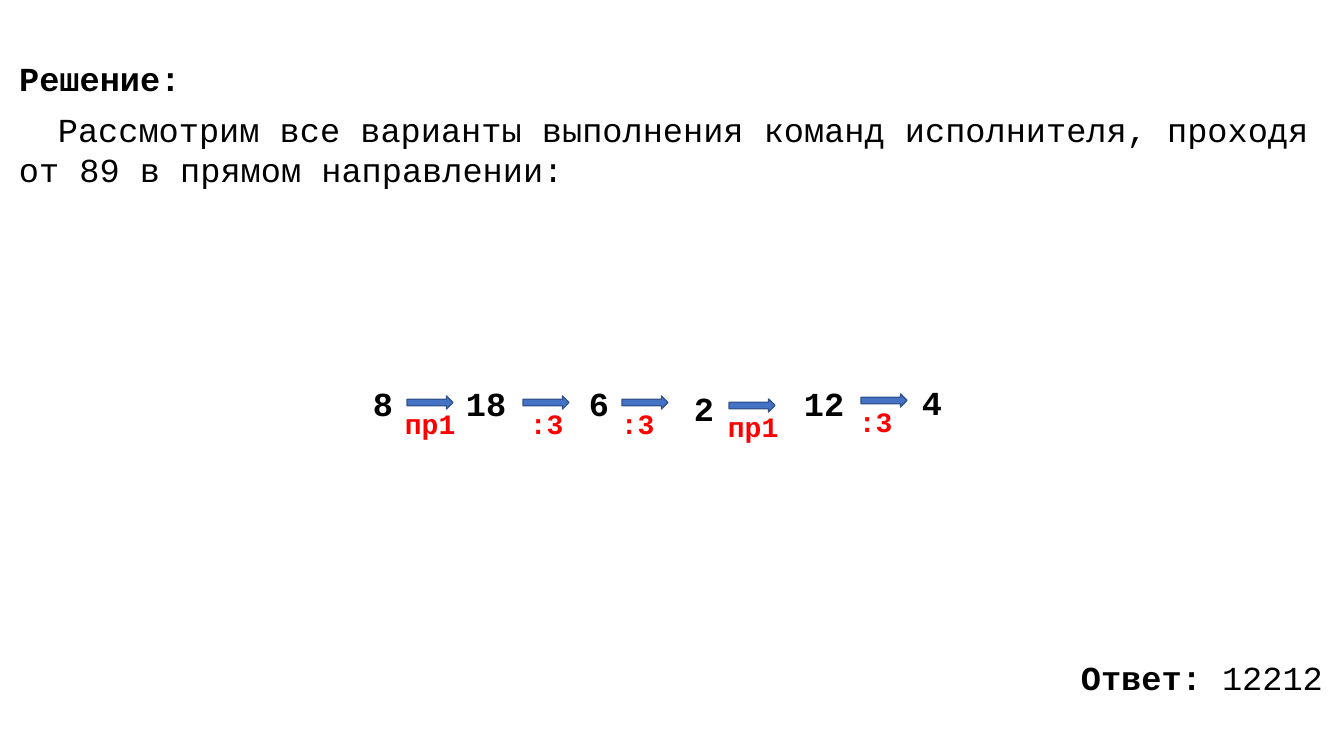
from pptx import Presentation
from pptx.dml.color import RGBColor
from pptx.enum.shapes import MSO_SHAPE
from pptx.enum.text import MSO_ANCHOR, MSO_AUTO_SIZE, PP_ALIGN
from pptx.util import Emu, Pt

PX = 12192000 / 1344
FONT = "Courier New"
BLACK, RED, BLUE, DARK_BLUE = "000000", "FF0000", "4472C4", "325491"

# Values of the chain: text, left, top
NUMBERS = [("8", 363, 378), ("18", 456, 378), ("6", 579, 378),
           ("2", 684, 383), ("12", 794, 378), ("4", 912, 377)]
# Commands between them: text, label left, arrow left, vertical shift
COMMANDS = [("пр1", 395, 407, 0), (":3", 520, 523, 0), (":3", 611, 622, 0),
            ("пр1", 718, 729, 3), (":3", 849, 861, -2)]


def px(n):
    return Emu(round(n * PX))


def rgb(color):
    return RGBColor.from_string(color)


def format_paragraph(p, size=24, color=BLACK, bold=None):
    p.alignment = PP_ALIGN.LEFT
    p.font.name = FONT
    p.font.size = Pt(size)
    p.font.color.rgb = rgb(color)
    p.font.bold = bold


def add_title(s, text, x, y, w, h):
    title = s.shapes.title
    title.left, title.top, title.width, title.height = map(px, (x, y, w, h))
    tf = title.text_frame
    tf.text = text
    tf.auto_size = MSO_AUTO_SIZE.NONE
    tf.vertical_anchor = MSO_ANCHOR.TOP
    format_paragraph(tf.paragraphs[0], bold=True)


def add_text(s, text, x, y, w, h, wrap=True, **style):
    tf = s.shapes.add_textbox(*map(px, (x, y, w, h))).text_frame
    tf.word_wrap = wrap
    tf.auto_size = MSO_AUTO_SIZE.SHAPE_TO_FIT_TEXT
    p = tf.paragraphs[0]
    p.text = text
    format_paragraph(p, **style)
    return p


def add_arrow(s, x, y):
    sp = s.shapes.add_shape(MSO_SHAPE.RIGHT_ARROW, *map(px, (x, y, 46, 13)))
    sp.shadow.inherit = False
    sp.fill.solid()
    sp.fill.fore_color.rgb = rgb(BLUE)
    sp.line.color.rgb = rgb(DARK_BLUE)
    sp.line.width = Pt(1)


def main():
    prs = Presentation()
    prs.slide_width, prs.slide_height = px(1344), px(756)
    s = prs.slides.add_slide(prs.slide_layouts[5])

    # Heading and explanation
    add_title(s, "Решение:", 9, 53, 672, 50)
    p = add_text(s, "Рассмотрим все варианты выполнения команд исполнителя, "
                 "проходя от 89 в прямом направлении:", 9, 104, 1327, 92)
    p._p.get_or_add_pPr().set("indent", str(px(39)))

    # Chain of values, box width follows the number of characters
    for text, x, y in NUMBERS:
        add_text(s, text, x, y, 20 + 21 * len(text), 50, wrap=False, bold=True)
    for text, label_x, arrow_x, shift in COMMANDS:
        add_arrow(s, arrow_x, 396 + shift)
        add_text(s, text, label_x, 402 + shift, 20 + 17 * len(text), 44,
                 wrap=False, size=20, color=RED, bold=True)

    # Answer
    p = add_text(s, "Ответ: ", 1071, 652, 270, 50)
    p.runs[0].font.bold = True
    p.add_run().text = "12212"

    prs.save("out.pptx")


if __name__ == "__main__":
    main()
